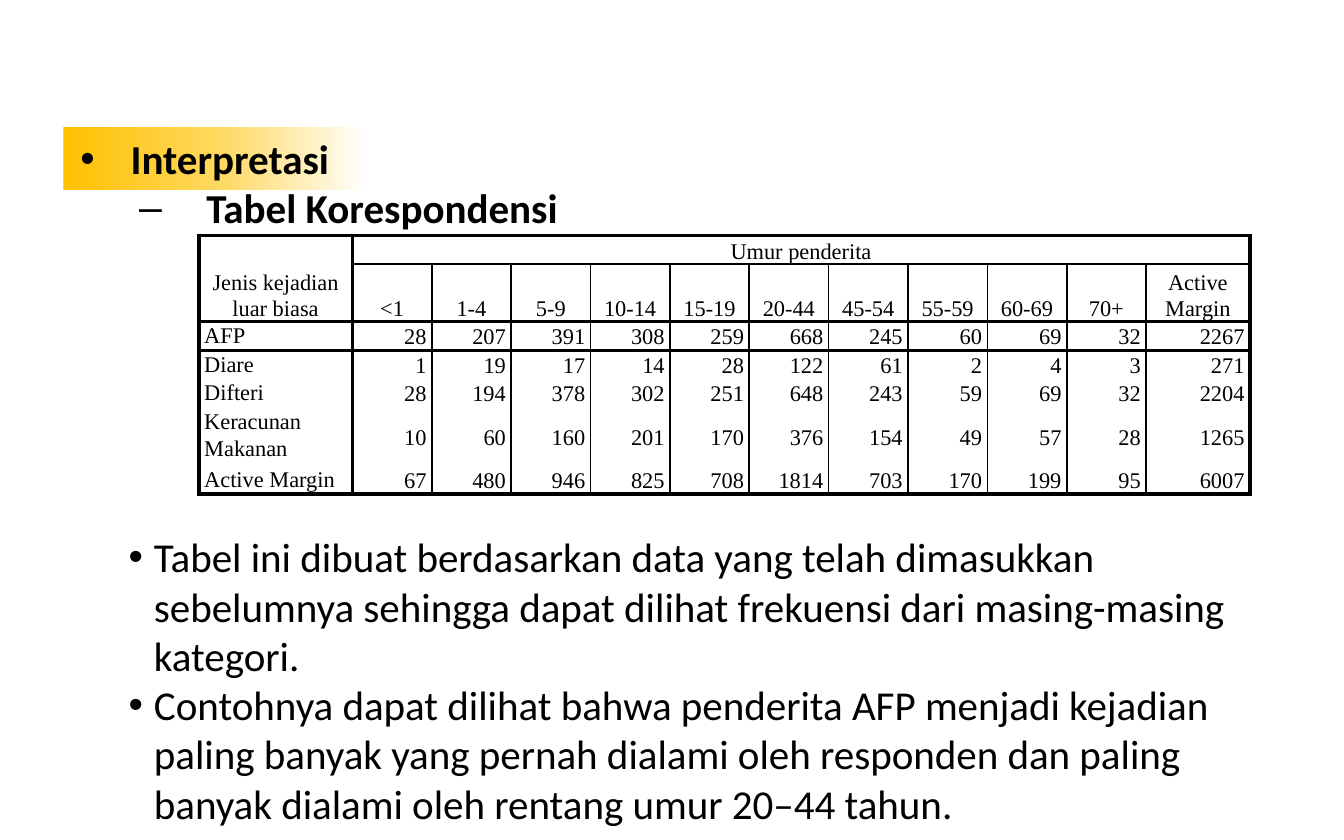
from pptx import Presentation
from pptx.dml.color import RGBColor
from pptx.enum.shapes import MSO_SHAPE
from pptx.enum.text import MSO_ANCHOR, PP_ALIGN
from pptx.oxml import parse_xml
from pptx.oxml.ns import nsdecls
from pptx.util import Cm, Pt
from copy import deepcopy

BLACK = RGBColor(0x00, 0x00, 0x00)
WHITE = RGBColor(0xFF, 0xFF, 0xFF)
GOLD = RGBColor(0xFF, 0xC0, 0x00)
PALE_GOLD = RGBColor(0xFF, 0xD8, 0x5D)

THICK, THIN = 2.25, 1
NO_STYLE = "{2D5ABB26-0587-4C30-8999-92F81FD0307C}"


def add_run(p, text, font, size, bold=False):
    r = p.add_run()
    r.text = text
    r.font.name = font
    r.font.size = Pt(size)
    r.font.bold = bold
    r.font.color.rgb = BLACK


def add_bullets(slide, box, items, bold=False):
    tf = slide.shapes.add_textbox(*[Cm(v) for v in box]).text_frame
    tf.word_wrap = True
    for i, (char, level, left, hang, text) in enumerate(items):
        p = tf.paragraphs[0] if i == 0 else tf.add_paragraph()
        p.level = level
        pPr = p._p.get_or_add_pPr()
        pPr.set("marL", str(Cm(left)))
        pPr.set("indent", str(-Cm(hang)))
        pPr.append(parse_xml(f'<a:buFont {nsdecls("a")} typeface="Arial"/>'))
        pPr.append(parse_xml(f'<a:buChar {nsdecls("a")} char="{char}"/>'))
        add_run(p, text, "Calibri", 22, bold)


prs = Presentation()
prs.slide_width, prs.slide_height = Cm(25.4), Cm(15.88)
s = prs.slides.add_slide(prs.slide_layouts[6])

# Gradient band behind the heading
sp = s.shapes.add_shape(MSO_SHAPE.RECTANGLE, Cm(1.2), Cm(2.4), Cm(5.76), Cm(1.19))
sp.shadow.inherit = False
sp.line.fill.background()
sp.fill.gradient()
sp.fill.gradient_angle = 0
first_stop = sp.fill._xPr.find(".//{*}gs")
first_stop.addnext(deepcopy(first_stop))
for stop, position, color in zip(sp.fill.gradient_stops, (0, 0.5, 1),
                                 (GOLD, PALE_GOLD, WHITE)):
    stop.position = position
    stop.color.rgb = color

# Headings
add_bullets(s, (1.27, 2.4, 22.86, 13.48), [
    ("•", 0, 0.95, 0.95, "Interpretasi"),
    ("–", 1, 2.38, 1.27, "Tabel Korespondensi"),
], bold=True)

# Correspondence table; None marks a cell covered by a merge
ages = ["<1", "1-4", "5-9", "10-14", "15-19", "20-44", "45-54", "55-59",
        "60-69", "70+", "Active Margin"]
rows = [
    ["Jenis kejadian luar biasa", "Umur penderita"] + [None] * 10,
    [None] + ages,
    ["AFP", 28, 207, 391, 308, 259, 668, 245, 60, 69, 32, 2267],
    ["Diare", 1, 19, 17, 14, 28, 122, 61, 2, 4, 3, 271],
    ["Difteri", 28, 194, 378, 302, 251, 648, 243, 59, 69, 32, 2204],
    ["Keracunan Makanan", 10, 60, 160, 201, 170, 376, 154, 49, 57, 28, 1265],
    ["Active Margin", 67, 480, 946, 825, 708, 1814, 703, 170, 199, 95, 6007],
]
n_rows, n_cols = len(rows), len(rows[0])
frame = s.shapes.add_table(n_rows, n_cols, Cm(3.76), Cm(4.45), Cm(19.86), Cm(2.1))
table = frame.table
frame._element.find(".//{*}tableStyleId").text = NO_STYLE
table.first_row = table.horz_banding = False
for col, width in zip(table.columns, [2.9] + [1.5] * 10 + [1.96]):
    col.width = Cm(width)
for row in table.rows:
    row.height = Cm(0.3)
table.cell(0, 0).merge(table.cell(1, 0))
table.cell(0, 1).merge(table.cell(0, n_cols - 1))

# Line width at each grid edge; body rows have no lines between them
row_edges = {0: THICK, 1: THIN, 2: THICK, n_rows: THICK}
col_edges = {c: THICK if c in (0, 1, n_cols) else THIN for c in range(n_cols + 1)}

for i, values in enumerate(rows):
    for j, value in enumerate(values):
        if value is None:
            continue
        cell = table.cell(i, j)
        cell.margin_left = cell.margin_right = 0
        cell.margin_top = cell.margin_bottom = 0

        tcPr = cell._tc.get_or_add_tcPr()
        for side, width in (("L", col_edges[j]),
                            ("R", col_edges[j + cell.span_width]),
                            ("T", row_edges.get(i)),
                            ("B", row_edges.get(i + cell.span_height))):
            if width:
                tcPr.append(parse_xml(
                    f'<a:ln{side} {nsdecls("a")} w="{Pt(width)}"><a:solidFill>'
                    f'<a:srgbClr val="{BLACK}"/></a:solidFill></a:ln{side}>'))
        cell.fill.solid()
        cell.fill.fore_color.rgb = WHITE

        p = cell.text_frame.paragraphs[0]
        p.line_spacing = 1.07
        if i < 2:
            p.alignment, cell.vertical_anchor = PP_ALIGN.CENTER, MSO_ANCHOR.BOTTOM
        elif j == 0:
            p.alignment, cell.vertical_anchor = PP_ALIGN.LEFT, MSO_ANCHOR.TOP
        else:
            p.alignment, cell.vertical_anchor = PP_ALIGN.RIGHT, MSO_ANCHOR.MIDDLE
        pPr = p._p.get_or_add_pPr()
        pPr.set("marL", str(Cm(0.1)))
        pPr.set("marR", str(Cm(0.1)))
        add_run(p, str(value), "Times New Roman", 12)

# Explanation
add_bullets(s, (2.18, 9.93, 21.82, 4.01), [
    ("•", 0, 0.48, 0.48,
     "Tabel ini dibuat berdasarkan data yang telah dimasukkan sebelumnya "
     "sehingga dapat dilihat frekuensi dari masing-masing kategori."),
    ("•", 0, 0.48, 0.48,
     "Contohnya dapat dilihat bahwa penderita AFP menjadi kejadian paling "
     "banyak yang pernah dialami oleh responden dan paling banyak dialami "
     "oleh rentang umur 20–44 tahun."),
])

prs.save("out.pptx")
